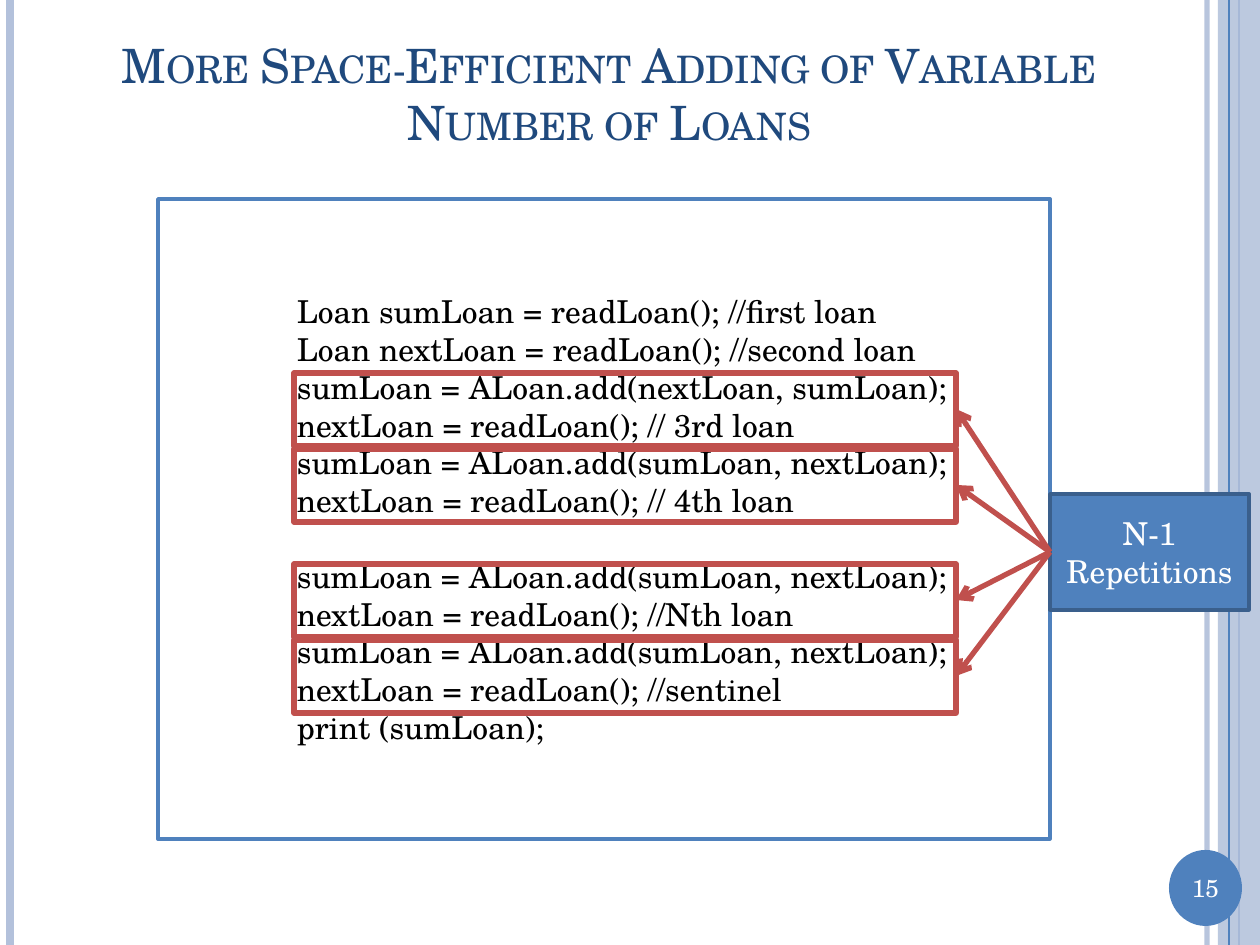
"""Build a slide about adding a variable number of loans with repeated steps."""
from typing import NamedTuple, Optional

from lxml import etree
from pptx import Presentation
from pptx.dml.color import RGBColor
from pptx.enum.shapes import MSO_CONNECTOR, MSO_SHAPE
from pptx.enum.text import MSO_ANCHOR, PP_ALIGN
from pptx.oxml.ns import qn
from pptx.util import Emu, Pt

RECTANGLE, OVAL = MSO_SHAPE.RECTANGLE, MSO_SHAPE.OVAL
STRAIGHT = MSO_CONNECTOR.STRAIGHT
MIDDLE = MSO_ANCHOR.MIDDLE
LEFT, CENTER = PP_ALIGN.LEFT, PP_ALIGN.CENTER

FONT = "TeX Gyre Schola"
BLUE, PALE_BLUE, DARK_BLUE = "4F81BD", "B3C1DB", "3A5F8C"
NAVY, RED, WHITE, BLACK = "1F497D", "C0504D", "FFFFFF", "000000"
SLIDE_WIDTH, SLIDE_HEIGHT = 1260, 945
INSET = 13


class Box(NamedTuple):
    left: int
    top: int
    width: int
    height: int


class Stripe(NamedTuple):
    x: int
    color: str
    weight: float
    opacity: int = 100


class Outline(NamedTuple):
    color: str
    weight: float


STRIPES_BEHIND = [Stripe(1207, PALE_BLUE, 3, 93), Stripe(10, PALE_BLUE, 4.5),
                  Stripe(1239, BLUE, 1.5)]
BAND = Box(1218, 0, 42, SLIDE_HEIGHT)
STRIPE_IN_FRONT = Stripe(1229, BLUE, 0.75)
NUMBER_DISC = Box(1169, 850, 73, 76)
TITLE_BOX = Box(63, 38, 1092, 110)
CODE_BOX = Box(158, 199, 892, 640)
REPETITION_BOX = Box(1050, 494, 199, 116)
STEP_BOXES = [Box(294, top, 662, 73) for top in (373, 449, 564, 640)]

OPENING_LINES = [
    "Loan sumLoan = readLoan(); //first loan",
    "Loan nextLoan = readLoan(); //second loan",
    "sumLoan = ALoan.add(nextLoan, sumLoan);",
    "nextLoan = readLoan(); // 3rd loan",
    "sumLoan = ALoan.add(sumLoan, nextLoan);",
    "nextLoan = readLoan(); // 4th loan",
]
CLOSING_LINES = [
    "sumLoan = ALoan.add(sumLoan, nextLoan);",
    "nextLoan = readLoan(); //Nth loan",
    "sumLoan = ALoan.add(sumLoan, nextLoan);",
    "nextLoan = readLoan(); //sentinel",
    "print (sumLoan);",
]


def px(length: int) -> Emu:
    return Emu(round(length * 914400 / 126))


def rgb(color: str) -> RGBColor:
    return RGBColor.from_string(color)


def set_opacity(element, percent: int) -> None:
    color = element.find(".//" + qn("a:srgbClr"))
    etree.SubElement(color, qn("a:alpha")).set("val", str(percent * 1000))


def add_box(slide, kind, box: Box, fill: Optional[str] = None,
            outline: Optional[Outline] = None):
    shape = slide.shapes.add_shape(kind, *map(px, box))
    shape.shadow.inherit = False
    if fill:
        shape.fill.solid()
        shape.fill.fore_color.rgb = rgb(fill)
    else:
        shape.fill.background()
    if outline:
        shape.line.color.rgb = rgb(outline.color)
        shape.line.width = Pt(outline.weight)
    else:
        shape.line.fill.background()
    return shape


def add_line(slide, start: tuple[int, int], end: tuple[int, int], outline: Outline):
    connector = slide.shapes.add_connector(STRAIGHT, *map(px, start + end))
    connector.line.color.rgb = rgb(outline.color)
    connector.line.width = Pt(outline.weight)
    etree.SubElement(connector._element.spPr, qn("a:effectLst"))
    return connector


def add_stripe(slide, stripe: Stripe) -> None:
    connector = add_line(slide, (stripe.x, 0), (stripe.x, SLIDE_HEIGHT),
                         Outline(stripe.color, stripe.weight))
    if stripe.opacity < 100:
        set_opacity(connector._element.spPr, stripe.opacity)


def add_arrow(slide, start: tuple[int, int], end: tuple[int, int]) -> None:
    connector = add_line(slide, start, end, Outline(RED, 3))
    line = connector._element.spPr.find(qn("a:ln"))
    etree.SubElement(line, qn("a:tailEnd")).set("type", "arrow")


def write(shape, lines: list[str], size: int, color: str,
          alignment=CENTER, side_margin: int = INSET) -> None:
    frame = shape.text_frame
    frame.word_wrap = True
    frame.vertical_anchor = MIDDLE
    frame.margin_left = px(side_margin)
    frame.margin_right = px(min(side_margin, INSET))
    frame.text = "\n".join(lines)
    for paragraph in frame.paragraphs:
        paragraph.alignment = alignment
        paragraph.font.name = FONT
        paragraph.font.size = Pt(size)
        paragraph.font.color.rgb = rgb(color)


def add_decoration(slide) -> None:
    for stripe in STRIPES_BEHIND:
        add_stripe(slide, stripe)
    band = add_box(slide, RECTANGLE, BAND, PALE_BLUE)
    set_opacity(band._element.spPr, 87)
    add_stripe(slide, STRIPE_IN_FRONT)
    disc = add_box(slide, OVAL, NUMBER_DISC, BLUE)
    write(disc, ["15"], 14, WHITE, side_margin=0)


def add_title(slide) -> None:
    title = slide.shapes.add_textbox(*map(px, TITLE_BOX))
    write(title, ["More Space-Efficient Adding of Variable Number of Loans"], 27, NAVY)
    run = title.text_frame.paragraphs[0].runs[0]
    run._r.get_or_add_rPr().set("cap", "small")


def add_code(slide) -> None:
    code = add_box(slide, RECTANGLE, CODE_BOX, WHITE, Outline(BLUE, 2))
    write(code, OPENING_LINES + CLOSING_LINES, 18, BLACK, LEFT, side_margin=139)
    code.text_frame.paragraphs[len(OPENING_LINES)].space_before = Pt(21.6)


def add_repetitions(slide) -> None:
    for box in STEP_BOXES:
        add_box(slide, RECTANGLE, box, outline=Outline(RED, 3))
    label = add_box(slide, RECTANGLE, REPETITION_BOX, BLUE, Outline(DARK_BLUE, 2))
    write(label, ["N-1 Repetitions"], 18, WHITE)
    start = (REPETITION_BOX.left, REPETITION_BOX.top + REPETITION_BOX.height // 2)
    for box in STEP_BOXES:
        add_arrow(slide, start, (box.left + box.width, box.top + box.height // 2))


def main() -> None:
    presentation = Presentation()
    presentation.slide_width = px(SLIDE_WIDTH)
    presentation.slide_height = px(SLIDE_HEIGHT)
    slide = presentation.slides.add_slide(presentation.slide_layouts[6])
    add_decoration(slide)
    add_title(slide)
    add_code(slide)
    add_repetitions(slide)
    presentation.save("out.pptx")


if __name__ == "__main__":
    main()
